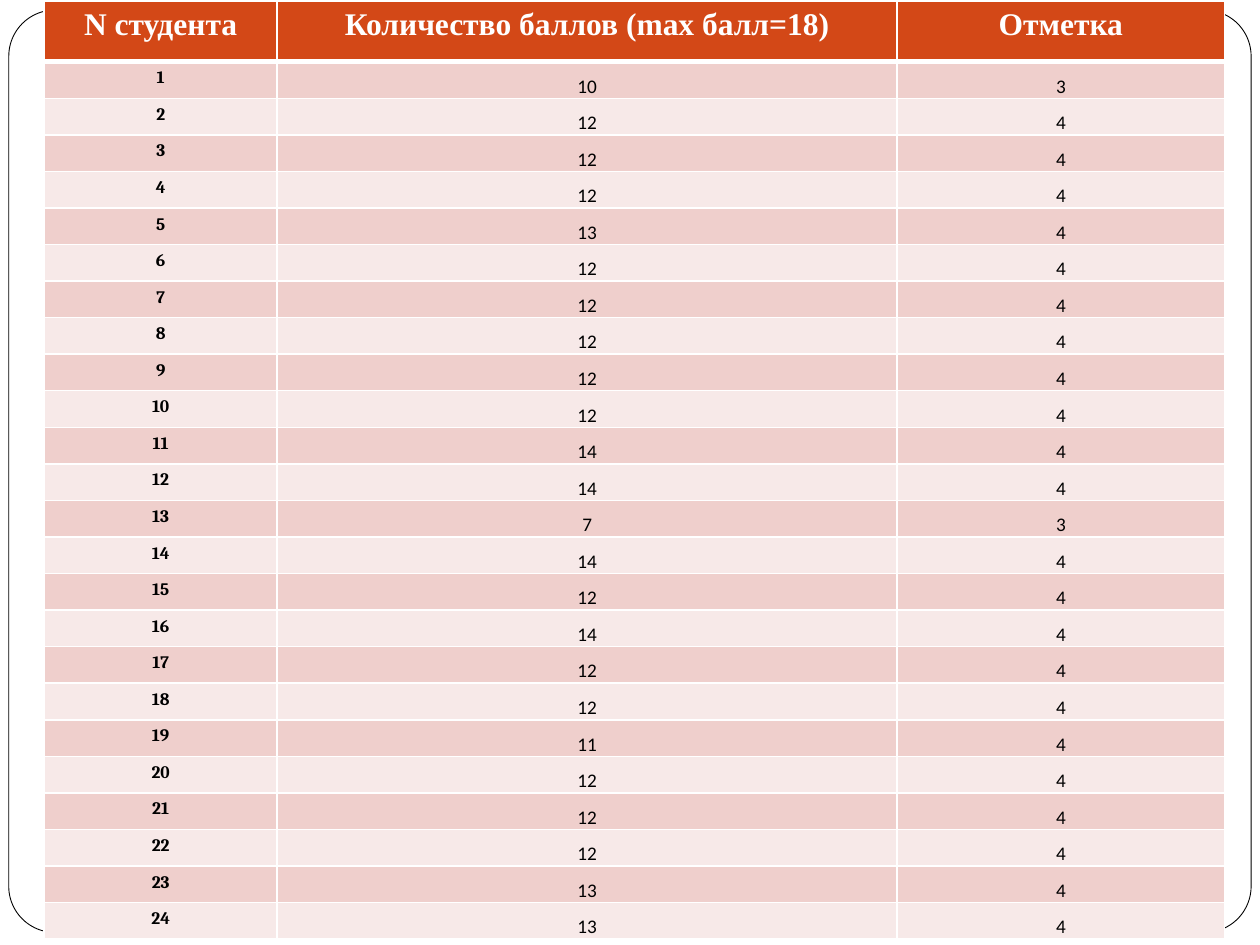
import pptx
import pptx.dml.color
import pptx.enum.shapes
import pptx.enum.text
import pptx.oxml
import pptx.oxml.ns
import pptx.util

COLS, ROWS = 100, 75
HEADS = ["N студента", "Количество баллов (max балл=18)", "Отметка"]
SCORES = [10, 12, 12, 12, 13, 12, 12, 12, 12, 12, 14, 14,
          7, 14, 12, 14, 12, 12, 11, 12, 12, 12, 13, 13]
WIDTHS = [18.5, 49.2, 26]
HEAD_ROW, TABLE_TALL = 4.8, 74.5
MIDDLE = pptx.enum.text.PP_ALIGN.CENTER
BOTTOM = pptx.enum.text.MSO_ANCHOR.BOTTOM
THIN, THICK = 1, 3


def color(code):
    return pptx.dml.color.RGBColor.from_string(code)


def mark(score):
    return 4 if score > 10 else 3


class Page:
    """Holds the style and the slide; lengths are in grid columns and rows."""

    white, black = "FFFFFF", "000000"
    head_fill = "D34817"
    bands = ["EFCFCC", "F7E9E8"]
    head = {"size": 18, "name": "Times New Roman", "bold": True, "color": white}
    label = {"size": 10, "name": "Cambria", "bold": True, "color": black}
    value = {"size": 11, "name": "Calibri", "bold": False, "color": black}
    tight = {"margin_left": 0.01, "margin_top": 0.01,
             "margin_right": 0.01, "margin_bottom": 0}

    def __init__(self, deck):
        self.unit_x = deck.slide_width / COLS
        self.unit_y = deck.slide_height / ROWS
        self.slide = deck.slides.add_slide(deck.slide_layouts[6])

    def wide(self, cols):
        return round(cols * self.unit_x)

    def tall(self, rows):
        return round(rows * self.unit_y)

    def box(self, left, top, cols, rows):
        return self.wide(left), self.tall(top), self.wide(cols), self.tall(rows)

    def frame(self, *place, curve):
        kind = pptx.enum.shapes.MSO_SHAPE.ROUNDED_RECTANGLE
        shape = self.slide.shapes.add_shape(kind, *self.box(*place))
        shape.adjustments[0] = curve
        shape.shadow.inherit = False
        shape.fill.solid()
        shape.fill.fore_color.rgb = color(self.white)
        shape.line.color.rgb = color(self.black)
        shape.line.width = pptx.util.Pt(0.5)

    def table(self, left, top, data):
        place = self.box(left, top, sum(WIDTHS), TABLE_TALL)
        table = self.slide.shapes.add_table(len(data), len(WIDTHS), *place).table
        for col, cols in zip(table.columns, WIDTHS):
            col.width = self.wide(cols)
        body_row = (TABLE_TALL - HEAD_ROW) / (len(data) - 1)
        for i, line in enumerate(data):
            table.rows[i].height = self.tall(body_row if i else HEAD_ROW)
            for j, text in enumerate(line):
                self.cell(table.cell(i, j), str(text), i, j)

    def cell(self, cell, text, row, col):
        if row == 0:
            fill, style = self.head_fill, self.head
        else:
            fill = self.bands[(row - 1) % 2]
            style = self.value if col else self.label
        if style is self.value:
            cell.vertical_anchor = BOTTOM
            for name, size in self.tight.items():
                setattr(cell, name, pptx.util.Inches(size))
        cell.fill.solid()
        cell.fill.fore_color.rgb = color(fill)
        self.edges(cell, top=THICK if row == 1 else THIN,
                   bottom=THIN if row else THICK)
        self.label_cell(cell.text_frame.paragraphs[0], text, style)

    def label_cell(self, para, text, style):
        para.alignment = MIDDLE
        run = para.add_run()
        run.text = text
        values = dict(style)
        run.font.color.rgb = color(values.pop("color"))
        values["size"] = pptx.util.Pt(values["size"])
        for name, value in values.items():
            setattr(run.font, name, value)

    def edges(self, cell, top, bottom):
        """Adds the four borders, which the schema wants ahead of the fill."""
        props = cell._tc.get_or_add_tcPr()
        sides = {"L": THIN, "R": THIN, "T": top, "B": bottom}
        for i, (side, width) in enumerate(sides.items()):
            props.insert(i, pptx.oxml.parse_xml(
                f'<a:ln{side} {pptx.oxml.ns.nsdecls("a")} w="{pptx.util.Pt(width)}">'
                f'<a:solidFill><a:srgbClr val="{self.white}"/></a:solidFill>'
                f'</a:ln{side}>'))


def main():
    deck = pptx.Presentation()
    deck.slide_width = pptx.util.Inches(10)
    deck.slide_height = pptx.util.Inches(7.5)
    page = Page(deck)
    page.frame(0.7, 0.8, 98.6, 73.2, curve=0.05)
    grades = [[n, score, mark(score)] for n, score in enumerate(SCORES, 1)]
    page.table(3.5, 0.1, [HEADS] + grades)
    deck.save("out.pptx")


if __name__ == "__main__":
    main()
